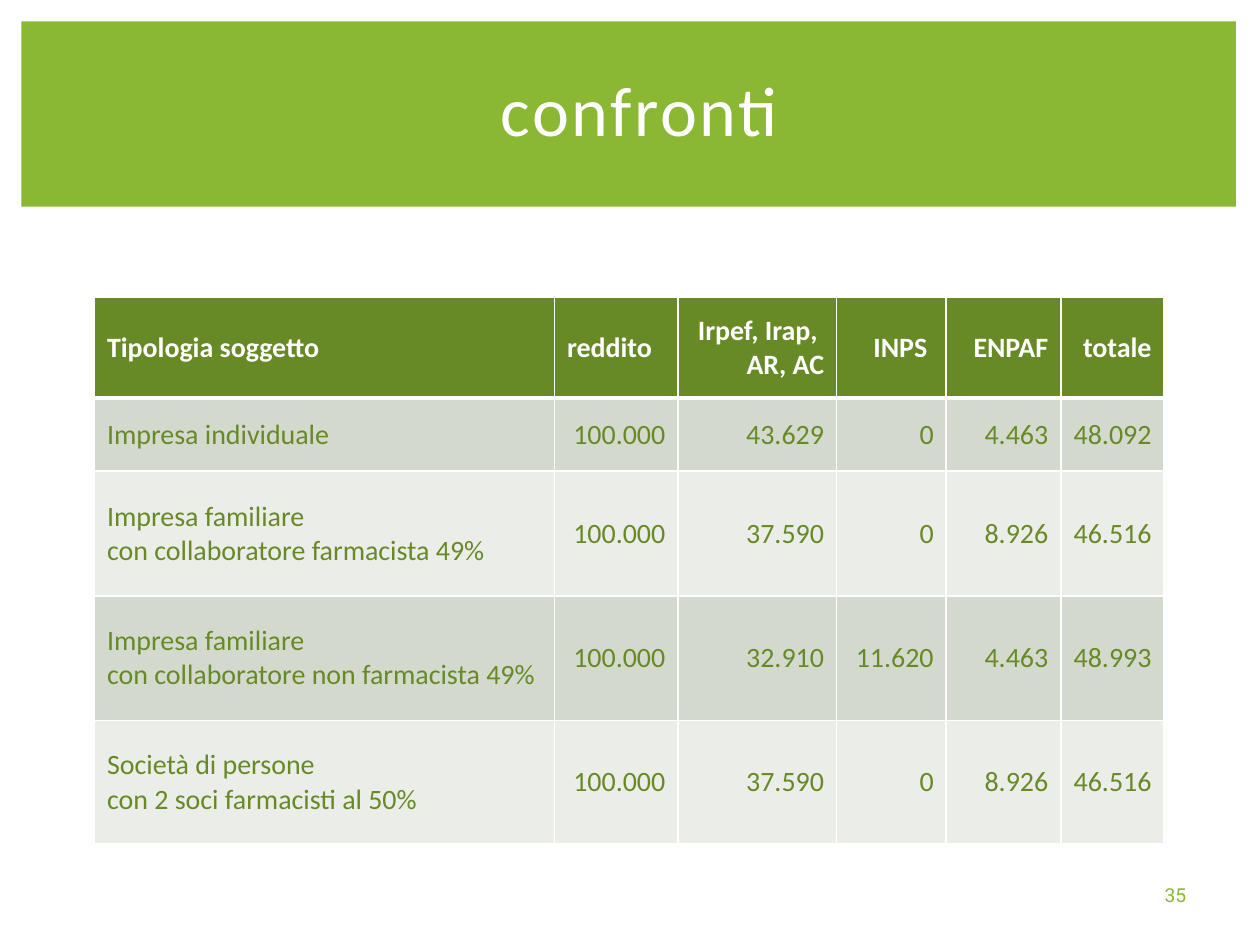
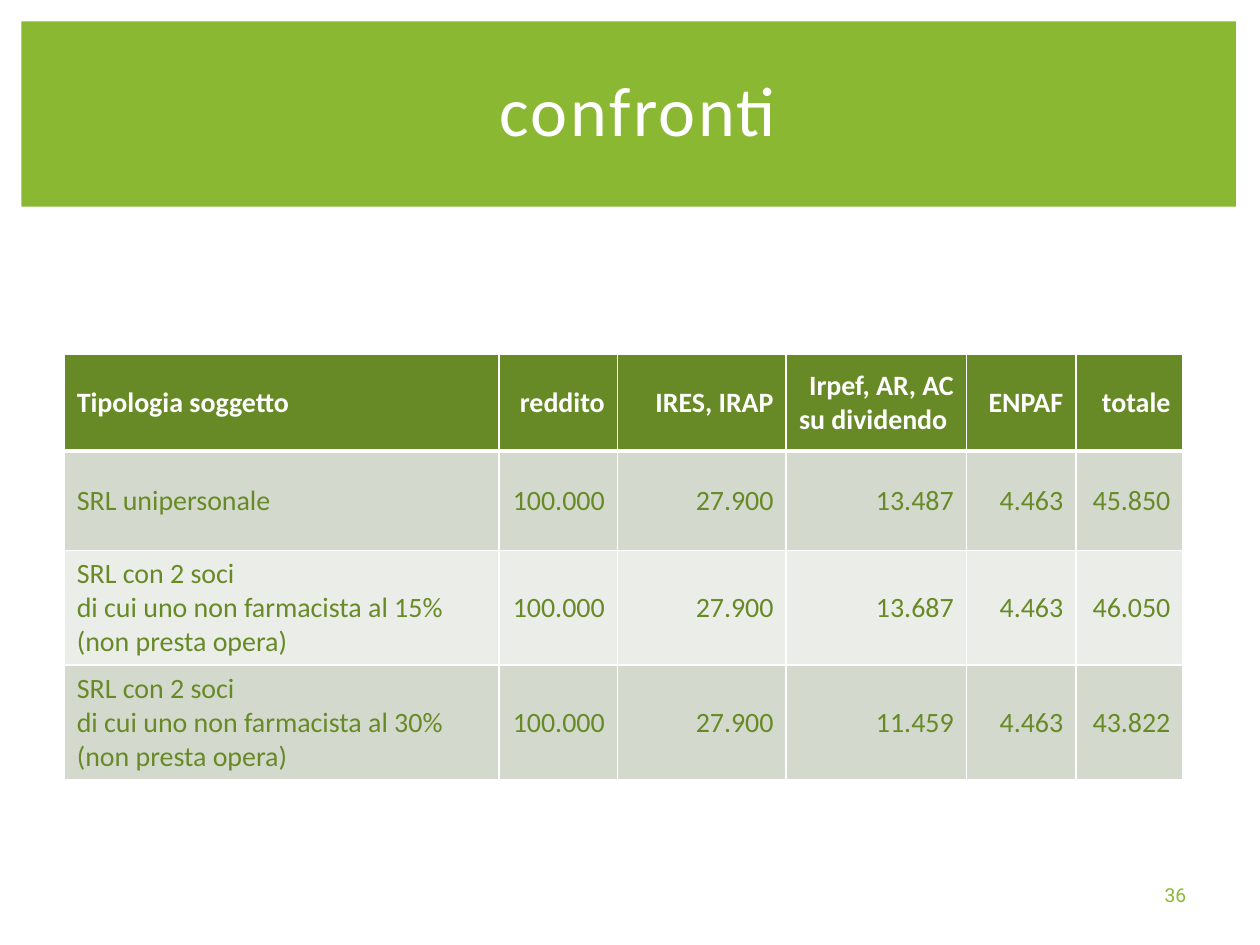
from dataclasses import dataclass

from lxml.etree import SubElement
from pptx import Presentation
from pptx.dml.color import RGBColor
from pptx.enum.shapes import MSO_SHAPE
from pptx.enum.text import MSO_ANCHOR, PP_ALIGN
from pptx.oxml.ns import qn
from pptx.slide import Slide
from pptx.table import _Cell
from pptx.text.text import TextFrame
from pptx.util import Inches, Pt

COLORS = {
    "band": "8AB833",
    "header": "678A26",
    "row_dark": "D3DACD",
    "row_light": "EBEDE8",
    "white": "FFFFFF",
}
BODY_FONT = "Calibri"
NUMBER_FONT = "Roboto"


@dataclass
class ComparisonSlide:
    number: int
    title_left: float
    table_left: float
    table_top: float
    column_widths: list[float]
    row_heights: list[float]
    rows: list[list[str]]
    left_aligned_headers: int


COMPARISONS = [
    ComparisonSlide(
        number=35,
        title_left=0.63,
        table_left=0.75,
        table_top=2.36,
        column_widths=[3.65, 0.98, 1.26, 0.87, 0.91, 0.82],
        row_heights=[0.8, 0.58, 0.99, 0.99, 0.98],
        rows=[
            ["Tipologia soggetto", "reddito", "Irpef, Irap, \nAR, AC", "INPS ", "ENPAF", "totale"],
            ["Impresa individuale", "100.000", "43.629", "0", "4.463", "48.092"],
            ["Impresa familiare\ncon collaboratore farmacista 49%",
             "100.000", "37.590", "0", "8.926", "46.516"],
            ["Impresa familiare\ncon collaboratore non farmacista 49%",
             "100.000", "32.910", "11.620", "4.463", "48.993"],
            ["Società di persone\ncon 2 soci farmacisti al 50%",
             "100.000", "37.590", "0", "8.926", "46.516"],
        ],
        left_aligned_headers=2,
    ),
    ComparisonSlide(
        number=36,
        title_left=0.62,
        table_left=0.51,
        table_top=2.81,
        column_widths=[3.45, 0.94, 1.34, 1.43, 0.87, 0.85],
        row_heights=[0.77, 0.79, 0.91, 0.91],
        rows=[
            ["Tipologia soggetto", "reddito", "IRES, IRAP", "Irpef, AR, AC su dividendo ",
             "ENPAF", "totale"],
            ["SRL unipersonale", "100.000", "27.900", "13.487", "4.463", "45.850"],
            ["SRL con 2 soci\ndi cui uno non farmacista al 15% (non presta opera)",
             "100.000", "27.900", "13.687", "4.463", "46.050"],
            ["SRL con 2 soci\ndi cui uno non farmacista al 30% (non presta opera)",
             "100.000", "27.900", "11.459", "4.463", "43.822"],
        ],
        left_aligned_headers=1,
    ),
]


def rgb(name: str) -> RGBColor:
    return RGBColor.from_string(COLORS[name])


def write_text(text_frame: TextFrame, text: str, size: float, color: str, alignment: PP_ALIGN,
               font_name: str = BODY_FONT, bold: bool = False) -> None:
    text_frame.text = text
    for paragraph in text_frame.paragraphs:
        paragraph.alignment = alignment
        for run in paragraph.runs:
            run.font.size = Pt(size)
            run.font.name = font_name
            run.font.bold = bold
            run.font.color.rgb = rgb(color)


def add_band(slide: Slide) -> None:
    band = slide.shapes.add_shape(
        MSO_SHAPE.RECTANGLE, Inches(0.17), Inches(0.17), Inches(9.64), Inches(1.47))
    band.shadow.inherit = False
    band.fill.solid()
    band.fill.fore_color.rgb = rgb("band")
    band.line.fill.background()


def add_title(slide: Slide, left: float) -> None:
    title = slide.shapes.add_textbox(Inches(left), Inches(0.48), Inches(8.91), Inches(0.95))
    title.text_frame.word_wrap = True
    write_text(title.text_frame, "confronti", 40, "white", PP_ALIGN.CENTER)
    run = title.text_frame.paragraphs[0].runs[0]
    run.font._element.set("spc", "150")


def add_slide_number(slide: Slide, number: int) -> None:
    box = slide.shapes.add_textbox(Inches(9.01), Inches(6.95), Inches(0.64), Inches(0.3))
    box.text_frame.word_wrap = True
    box.text_frame.vertical_anchor = MSO_ANCHOR.MIDDLE
    write_text(box.text_frame, str(number), 11, "band", PP_ALIGN.CENTER, NUMBER_FONT)


def set_borders(cell: _Cell, top: float, bottom: float) -> None:
    properties = cell._tc.get_or_add_tcPr()
    for tag, width in (("a:lnL", 1), ("a:lnR", 1), ("a:lnT", top), ("a:lnB", bottom)):
        line = SubElement(properties, qn(tag), w=str(Pt(width)))
        fill = SubElement(line, qn("a:solidFill"))
        SubElement(fill, qn("a:srgbClr"), val=COLORS["white"])


def format_cell(cell: _Cell, text: str, row: int, column: int, left_aligned_headers: int) -> None:
    is_header = row == 0
    is_left = column == 0 or (is_header and column < left_aligned_headers)
    set_borders(cell, top=3 if row == 1 else 1, bottom=3 if is_header else 1)
    cell.fill.solid()
    body_fill = "row_dark" if row % 2 else "row_light"
    cell.fill.fore_color.rgb = rgb("header" if is_header else body_fill)
    cell.vertical_anchor = MSO_ANCHOR.MIDDLE
    write_text(cell.text_frame, text, 16, "white" if is_header else "header",
               PP_ALIGN.LEFT if is_left else PP_ALIGN.RIGHT, bold=is_header)


def add_comparison_table(slide: Slide, comparison: ComparisonSlide) -> None:
    widths, heights = comparison.column_widths, comparison.row_heights
    table = slide.shapes.add_table(
        len(heights), len(widths), Inches(comparison.table_left), Inches(comparison.table_top),
        Inches(sum(widths)), Inches(sum(heights))).table
    for column, width in zip(table.columns, widths):
        column.width = Inches(width)
    for row, height in zip(table.rows, heights):
        row.height = Inches(height)
    for row_index, texts in enumerate(comparison.rows):
        for column_index, text in enumerate(texts):
            format_cell(table.cell(row_index, column_index), text, row_index, column_index,
                        comparison.left_aligned_headers)


def main() -> None:
    presentation = Presentation()
    presentation.slide_width = Inches(10)
    presentation.slide_height = Inches(7.5)
    for comparison in COMPARISONS:
        slide = presentation.slides.add_slide(presentation.slide_layouts[6])
        add_band(slide)
        add_title(slide, comparison.title_left)
        add_slide_number(slide, comparison.number)
        add_comparison_table(slide, comparison)
    presentation.save("out.pptx")


if __name__ == "__main__":
    main()
